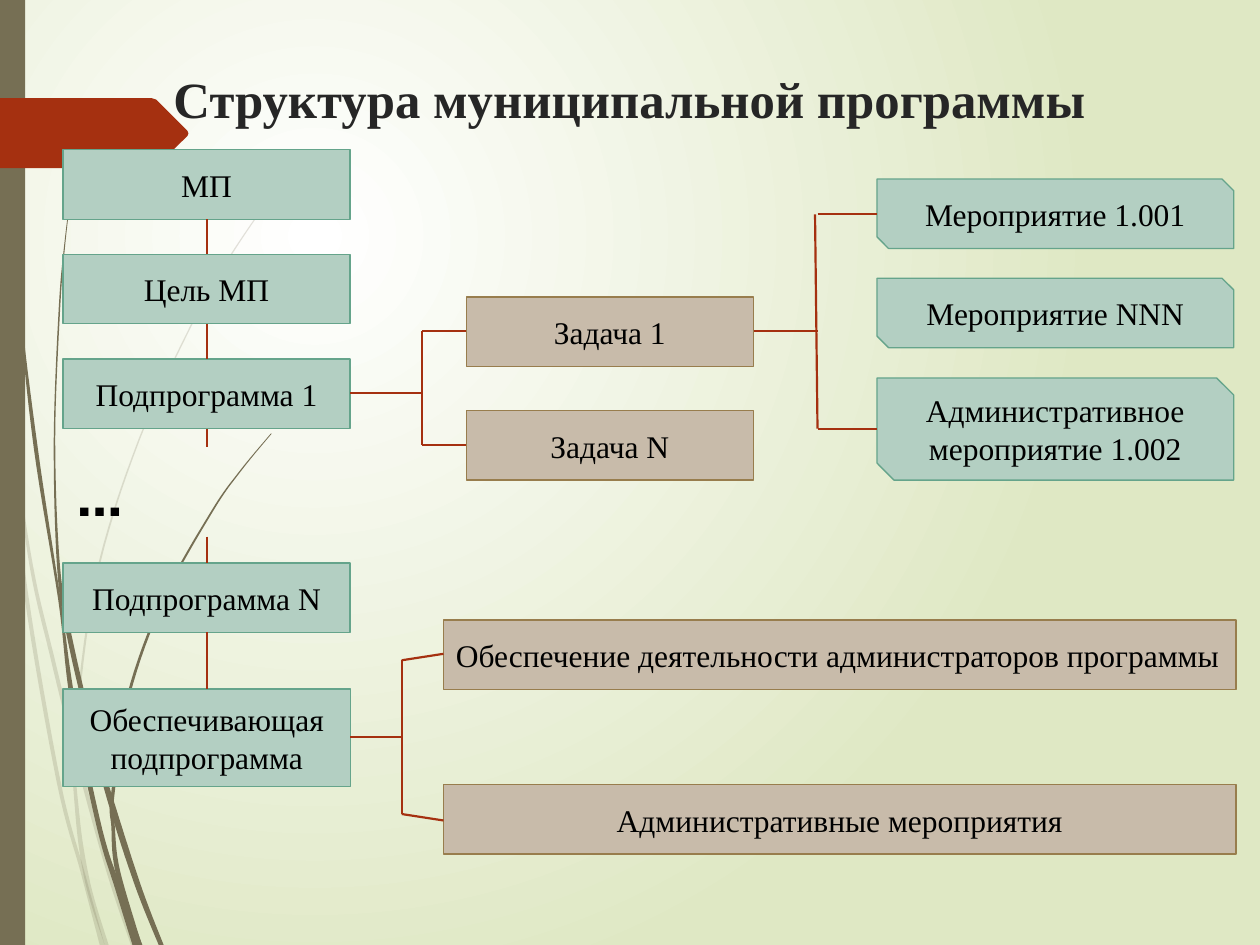
import lxml.etree
import pptx
import pptx.dml.color
import pptx.enum.shapes
import pptx.enum.text
import pptx.oxml.ns
import pptx.util

Cm = pptx.util.Cm
Pt = pptx.util.Pt
Kind = pptx.enum.shapes.MSO_SHAPE
Align = pptx.enum.text.PP_ALIGN
Anchor = pptx.enum.text.MSO_ANCHOR
qn = pptx.oxml.ns.qn

HUES = {
    "white": "FFFFFF", "lime": "DFE8C4", "olive": "766F54", "rust": "A53010",
    "mint": "B3CFC2", "green": "65A48B", "sand": "C8BBAA", "brown": "987D4D",
    "ink": "000000", "title": "262626",
}
SERIF = "Times New Roman"

# Each strand is a chain of (x, y, width) in centimetres.
DARK = [
    [(.06, 0, .03), (.14, 2.79, .03), (.37, 5.92, .03), (.72, 9.02, .08),
     (1.2, 12.1, .05), (1.47, 14.15, .1), (2.01, 16.71, .1),
     (2.38, 17.9, .13), (2.77, 19.05, .2)],
    [(1.47, 3.58, .01), (1.31, 4.9, .02), (1.2, 6.22, .03), (1.1, 8.86, .03),
     (1.18, 11.4, .06), (1.4, 12.83, .1), (1.91, 15, .1), (2.34, 16.5, .13),
     (2.82, 17.96, .12), (3.25, 19.05, .1)],
    [(5.47, 8.74, .02), (4.85, 9.49, .03), (4.28, 10.3, .04),
     (3.3, 12.06, .05), (2.59, 14.02, .06), (2.27, 16.05, .07),
     (2.28, 16.66, .07), (2.37, 17.55, .1), (2.8, 19.05, .12)],
]
PALE = [
    [(.19, 8.8, .05), (.52, 11.93, .08), (1.18, 15.75, .08),
     (1.67, 17.6, .08), (2.06, 19.05, .1)],
    [(.25, 8.76, .02), (.63, 11.4, .07), (1.05, 13.23, .08),
     (1.6, 15.45, .08), (2.2, 17.6, .09), (2.69, 19.05, .1)],
    [(5.51, 3.89, .02), (4.74, 5.01, .03), (4.03, 6.21, .03),
     (2.81, 8.85, .03), (1.92, 11.72, .04), (1.52, 14.83, .05),
     (1.56, 16.41, .08), (1.77, 17.8, .1), (2.15, 19.05, .08)],
]


def tint(name):
    return pptx.dml.color.RGBColor.from_string(HUES[name])


def paint(shape, fill, edge=None):
    shape.shadow.inherit = False
    shape.fill.solid()
    shape.fill.fore_color.rgb = tint(fill)
    if edge:
        shape.line.color.rgb = tint(edge)
        shape.line.width = Pt(0.75)
    else:
        shape.line.fill.background()


def write(frame, text, size=18, font=SERIF, hue="ink", bold=False,
          align=Align.CENTER, anchor=Anchor.MIDDLE):
    frame.word_wrap = True
    frame.vertical_anchor = anchor
    para = frame.paragraphs[0]
    para.alignment = align
    run = para.add_run()
    run.text = text
    run.font.size = Pt(size)
    run.font.name = font
    run.font.bold = bold
    run.font.color.rgb = tint(hue)


def label(slide, text, left, top, width, height, **style):
    frame = slide.shapes.add_textbox(
        Cm(left), Cm(top), Cm(width), Cm(height)).text_frame
    write(frame, text, anchor=Anchor.TOP, **style)
    return frame


def box(slide, text, left, top, width, height=1.4, fill="mint", edge="green",
        kind=Kind.RECTANGLE, **style):
    shape = slide.shapes.add_shape(
        kind, Cm(left), Cm(top), Cm(width), Cm(height))
    paint(shape, fill, edge)
    if text:
        write(shape.text_frame, text, **style)


def link(slide, *ends):
    line = slide.shapes.add_connector(
        pptx.enum.shapes.MSO_CONNECTOR.STRAIGHT, *map(Cm, ends))
    line.line.color.rgb = tint("rust")
    line.line.width = Pt(1.25)
    lxml.etree.SubElement(line.element.spPr, qn("a:effectLst"))


def outline(slide, points, fill, alpha=None):
    dots = [(Cm(x), Cm(y)) for x, y in points]
    form = slide.shapes.build_freeform(*dots[0], scale=1.0)
    form.add_line_segments(dots[1:], close=True)
    shape = form.convert_to_shape()
    paint(shape, fill)
    if alpha:
        color = shape.element.spPr.find(qn("a:solidFill"))[0]
        lxml.etree.SubElement(color, qn("a:alpha"), val=str(alpha * 1000))


def smooth(knots, steps=8):
    chain = [knots[0], *knots, knots[-1]]
    curve = []
    for a, b, c, d in zip(chain, chain[1:], chain[2:], chain[3:]):
        for step in range(steps):
            t = step / steps
            curve.append([
                (2 * q + (r - p) * t + (2 * p - 5 * q + 4 * r - s) * t ** 2
                 + (3 * q - p - 3 * r + s) * t ** 3) / 2
                for p, q, r, s in zip(a, b, c, d)])
    return curve + [knots[-1]]


def strand(slide, knots, alpha=None):
    curve = smooth(knots)
    near = [(x - w / 2, y) for x, y, w in curve]
    far = [(x + w / 2, y) for x, y, w in reversed(curve)]
    outline(slide, near + far, "olive", alpha)


def glow(slide):
    fill = slide.background.fill
    fill.gradient()
    for stop, name in zip(fill.gradient_stops, ("white", "lime")):
        stop.color.rgb = tint(name)
    grad = next(slide.element.iter(qn("a:gradFill")))
    grad.remove(grad.find(qn("a:lin")))
    ring = lxml.etree.SubElement(grad, qn("a:path"), path="circle")
    lxml.etree.SubElement(ring, qn("a:fillToRect"),
                          l="50000", t="50000", r="100000", b="100000")


def decor(slide):
    glow(slide)
    for knots in PALE:
        strand(slide, knots, 20)
    for knots in DARK:
        strand(slide, knots)
    box(slide, "", 0, 0, 0.51, 19.05, "olive", None)
    outline(slide, [(0, 1.98), (3.06, 1.98), (3.15, 2.01), (3.78, 2.64),
                    (3.8, 2.69), (3.78, 2.74), (3.15, 3.36), (3.06, 3.39),
                    (0, 3.39)], "rust")


def boxes(slide):
    for text, top in (("МП", 3.02), ("Цель МП", 5.13),
                      ("Подпрограмма 1", 7.24), ("Подпрограмма N", 11.35)):
        box(slide, text, 1.27, top, 5.79)
    box(slide, "Обеспечивающая подпрограмма", 1.27, 13.89, 5.8, 1.96)
    earth = {"fill": "sand", "edge": "brown"}
    for text, top in (("Задача 1", 5.99), ("Задача N", 8.28)):
        box(slide, text, 9.4, top, 5.79, **earth)
    for text, top, align in (
            ("Обеспечение деятельности администраторов программы", 12.5,
             Align.LEFT),
            ("Административные мероприятия", 15.82, Align.CENTER)):
        box(slide, text, 8.94, top, 15.98, align=align, **earth)
    for text, top, height in (
            ("Мероприятие 1.001", 3.61, 1.4),
            ("Мероприятие NNN", 5.61, 1.4),
            ("Административное мероприятие 1.002", 7.62, 2.06)):
        box(slide, text, 17.68, top, 7.19, height,
            kind=Kind.SNIP_2_DIAG_RECTANGLE)


def links(slide):
    for top, low in ((4.42, 5.13), (6.53, 7.24), (8.64, 9.02),
                     (10.82, 11.35), (12.75, 13.89)):
        link(slide, 4.17, top, 4.17, low)
    for ends in (
            (7.06, 7.92, 8.51, 7.92), (8.51, 6.68, 9.4, 6.68),
            (8.51, 8.97, 9.4, 8.97), (8.51, 6.68, 8.51, 8.97),
            (15.19, 6.68, 16.48, 6.68), (16.48, 4.32, 17.68, 4.32),
            (16.48, 8.64, 17.68, 8.64), (16.43, 4.32, 16.48, 8.64),
            (8.1, 13.31, 8.94, 13.18), (8.94, 16.54, 8.1, 16.41),
            (8.1, 16.41, 8.1, 13.31), (7.06, 14.86, 8.1, 14.86)):
        link(slide, *ends)


def main():
    deck = pptx.Presentation()
    deck.slide_width, deck.slide_height = Cm(25.4), Cm(19.05)
    slide = deck.slides.add_slide(deck.slide_layouts[6])
    decor(slide)
    title = label(slide, "Структура муниципальной программы",
                  1.27, 1.12, 22.86, 1.19, size=29, hue="title", bold=True)
    title.margin_top = Cm(0.25)
    boxes(slide)
    label(slide, "…", 1.27, 9.02, 5.79, 1.8, size=36,
          font="TeX Gyre Adventor", bold=True, align=Align.LEFT)
    links(slide)
    deck.save("out.pptx")


if __name__ == "__main__":
    main()
